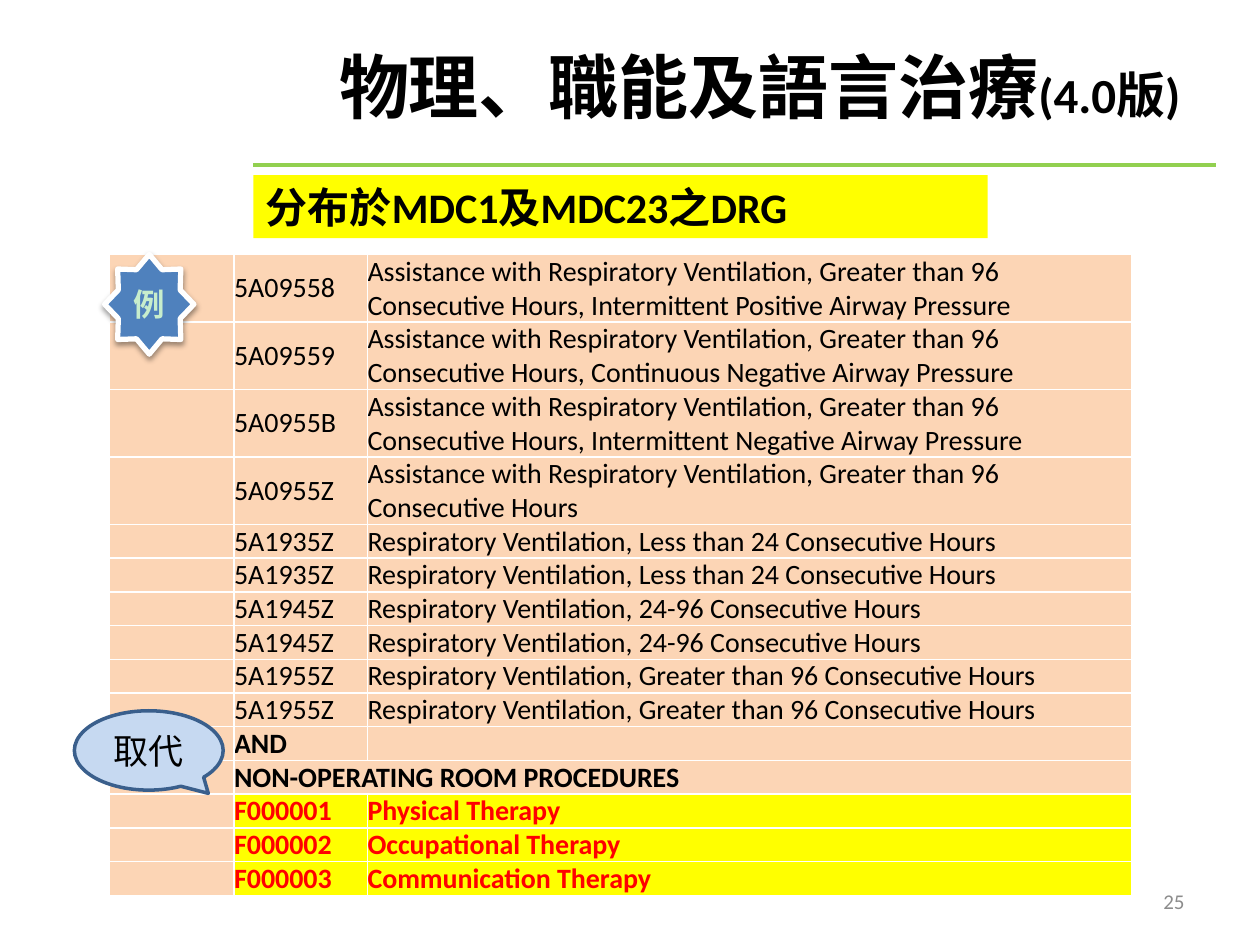
from lxml import etree
from pptx import Presentation
from pptx.dml.color import RGBColor
from pptx.enum.shapes import MSO_CONNECTOR, MSO_SHAPE
from pptx.enum.text import MSO_ANCHOR, PP_ALIGN
from pptx.oxml.ns import qn
from pptx.util import Cm, Pt

STRAIGHT = MSO_CONNECTOR.STRAIGHT
RECTANGLE, STAR, CALLOUT = (MSO_SHAPE.RECTANGLE, MSO_SHAPE.STAR_8_POINT,
                            MSO_SHAPE.OVAL_CALLOUT)
TOP, MIDDLE = MSO_ANCHOR.TOP, MSO_ANCHOR.MIDDLE
LEFT, CENTER, RIGHT = PP_ALIGN.LEFT, PP_ALIGN.CENTER, PP_ALIGN.RIGHT

THEME = {
    "latin": "Calibri", "cjk": "Noto Sans CJK SC",
    "white": "FFFFFF", "black": "000000", "red": "FF0000", "yellow": "FFFF00",
    "green": "92D050", "pale green": "C7EDCC", "gray": "8C8C8C",
    "peach": "FCD5B5", "blue": "4F81BD", "pale blue": "C6D9F1", "navy": "3A5F8C",
    "title": 40, "version": 28, "heading": 24, "callout": 20, "star": 18,
    "table": 16, "number": 12,
}

# Content
TITLE, VERSION = "物理、職能及語言治療", "(4.0版)"
HEADING = "分布於MDC1及MDC23之DRG"
EXAMPLE, REPLACE, PAGE = "例", "取代", "25"
LONG = "Assistance with Respiratory Ventilation, Greater than 96 Consecutive Hours"
SHORT = "Respiratory Ventilation, "
VENTILATION = [
    ("5A09558", LONG + ", Intermittent Positive Airway Pressure"),
    ("5A09559", LONG + ", Continuous Negative Airway Pressure"),
    ("5A0955B", LONG + ", Intermittent Negative Airway Pressure"),
    ("5A0955Z", LONG),
    ("5A1935Z", SHORT + "Less than 24 Consecutive Hours"),
    ("5A1935Z", SHORT + "Less than 24 Consecutive Hours"),
    ("5A1945Z", SHORT + "24-96 Consecutive Hours"),
    ("5A1945Z", SHORT + "24-96 Consecutive Hours"),
    ("5A1955Z", SHORT + "Greater than 96 Consecutive Hours"),
    ("5A1955Z", SHORT + "Greater than 96 Consecutive Hours"),
]
CONDITIONS = [("AND", ""), ("NON-OPERATING ROOM PROCEDURES", "")]
THERAPIES = [
    ("F000001", "Physical Therapy"),
    ("F000002", "Occupational Therapy"),
    ("F000003", "Communication Therapy"),
]
GROUPS = [
    (VENTILATION, {"color": "black", "bold": False}, "peach", MIDDLE),
    (CONDITIONS, {"color": "black", "bold": True}, "peach", TOP),
    (THERAPIES, {"color": "red", "bold": True}, "yellow", TOP),
]

# Places in centimetres: left, top, width, height
TITLE_BOX = (6.5, 0.13, 17.63, 3.18)
HEADING_BOX = (5.11, 3.53, 14.8, 1.27)
PAGE_BOX = (18.21, 17.65, 5.92, 1.02)
STAR_BOX = (2.11, 5.13, 1.8, 2.01)
CALLOUT_BOX = (1.5, 14.33, 3, 1.6)
RULE = (5.11, 3.33, 24.51, 3.33)
TABLE_LEFT, TABLE_TOP = 2.21, 5.13
COLUMNS = (2.51, 2.69, 15.41)
LINE_HEIGHT = 0.68


def color(name):
    return RGBColor.from_string(THEME[name])


def place(shape, box):
    for name, value in zip(("left", "top", "width", "height"), box):
        setattr(shape, name, Cm(value))


def add_run(paragraph, text, size, ink="black", bold=False, latin="latin"):
    run = paragraph.add_run()
    run.text = text
    values = {"size": Pt(THEME[size]), "bold": bold, "name": THEME[latin]}
    for name, value in values.items():
        setattr(run.font, name, value)
    run.font.color.rgb = color(ink)
    east_asian = etree.Element(qn("a:ea"), typeface=THEME["cjk"])
    run.font._element.find(qn("a:latin")).addnext(east_asian)


def format_frame(frame, anchor, align, margin=None):
    values = {"word_wrap": True, "vertical_anchor": anchor}
    if margin is not None:
        values.update({f"margin_{side}": Cm(margin)
                       for side in ("left", "right", "top", "bottom")})
    for name, value in values.items():
        setattr(frame, name, value)
    frame.paragraphs[0].alignment = align
    return frame.paragraphs[0]


def add_shape(slide, kind, box, fill, line=None, width=0):
    shape = slide.shapes.add_shape(kind, *map(Cm, box))
    shape.shadow.inherit = False
    shape.fill.solid()
    shape.fill.fore_color.rgb = color(fill)
    if line:
        shape.line.color.rgb = color(line)
        shape.line.width = Pt(width)
    else:
        shape.line.fill.background()
    return shape


def add_borders(cell):
    properties = cell._tc.get_or_add_tcPr()
    for index, side in enumerate(("lnL", "lnR", "lnT", "lnB")):
        border = etree.Element(qn(f"a:{side}"), w=str(Pt(1)))
        fill = etree.SubElement(border, qn("a:solidFill"))
        etree.SubElement(fill, qn("a:srgbClr"), val=THEME["white"])
        properties.insert(index, border)


def fill_cell(cell, text, style, fill, anchor):
    for side in ("left", "right", "top", "bottom"):
        setattr(cell, f"margin_{side}", 0)
    cell.vertical_anchor = anchor
    cell.fill.solid()
    cell.fill.fore_color.rgb = color(fill)
    add_borders(cell)
    paragraph = cell.text_frame.paragraphs[0]
    if text:
        add_run(paragraph, text, "table", style["color"], style["bold"])
    else:
        # An empty cell keeps the type size so that its row stays low
        etree.SubElement(paragraph._p, qn("a:endParaRPr"),
                         sz=str(THEME["table"] * 100))


def add_code_table(slide):
    rows = [(entry, *look) for entries, *look in GROUPS for entry in entries]
    heights = [LINE_HEIGHT * (2 if entry[1].startswith(LONG) else 1)
               for entry, *_ in rows]
    table = slide.shapes.add_table(
        len(rows), len(COLUMNS), Cm(TABLE_LEFT), Cm(TABLE_TOP),
        Cm(sum(COLUMNS)), Cm(sum(heights))).table
    table.first_row = table.horz_banding = False
    for column, width in zip(table.columns, COLUMNS):
        column.width = Cm(width)
    for index, (entry, style, fill, anchor) in enumerate(rows):
        table.rows[index].height = Cm(heights[index])
        for position, text in enumerate(("", *entry)):
            cell_fill = fill if position else "peach"
            fill_cell(table.cell(index, position), text, style, cell_fill, anchor)
        if entry == CONDITIONS[1]:
            table.cell(index, 1).merge(table.cell(index, 2))


def add_soft_shadow(shape):
    effects = shape._element.spPr.find(qn("a:effectLst"))
    shadow = etree.SubElement(effects, qn("a:outerShdw"), blurRad="40000",
                              dist="20000", dir="5400000", rotWithShape="0")
    tint = etree.SubElement(shadow, qn("a:srgbClr"), val=THEME["black"])
    etree.SubElement(tint, qn("a:alpha"), val="38000")


def main():
    presentation = Presentation()
    presentation.slide_width, presentation.slide_height = Cm(25.4), Cm(19.05)
    slide = presentation.slides.add_slide(presentation.slide_layouts[5])
    slide.background.fill.solid()
    slide.background.fill.fore_color.rgb = color("white")

    # Title and the rule below it
    title = slide.shapes.title
    place(title, TITLE_BOX)
    paragraph = format_frame(title.text_frame, MIDDLE, CENTER)
    add_run(paragraph, TITLE, "title", bold=True, latin="cjk")
    add_run(paragraph, VERSION, "version", bold=True)
    rule = slide.shapes.add_connector(STRAIGHT, *map(Cm, RULE))
    rule.line.color.rgb = color("green")
    rule.line.width = Pt(2.25)
    etree.SubElement(rule._element.spPr, qn("a:effectLst"))

    # Page number
    page = slide.shapes.add_textbox(*map(Cm, PAGE_BOX))
    add_run(format_frame(page.text_frame, MIDDLE, RIGHT), PAGE, "number", "gray")

    # Heading band and table of codes
    heading = add_shape(slide, RECTANGLE, HEADING_BOX, "yellow")
    add_run(format_frame(heading.text_frame, TOP, LEFT), HEADING, "heading", bold=True)
    add_code_table(slide)

    # Star and callout over the first column
    star = add_shape(slide, STAR, STAR_BOX, "blue", "white", 3)
    add_soft_shadow(star)
    add_run(format_frame(star.text_frame, MIDDLE, CENTER, 0), EXAMPLE,
            "star", "pale green", True)
    callout = add_shape(slide, CALLOUT, CALLOUT_BOX, "pale blue", "navy", 2)
    callout.adjustments[0], callout.adjustments[1] = 0.4, 0.54
    add_run(format_frame(callout.text_frame, MIDDLE, CENTER, 0), REPLACE, "callout")

    presentation.save("out.pptx")


if __name__ == "__main__":
    main()
